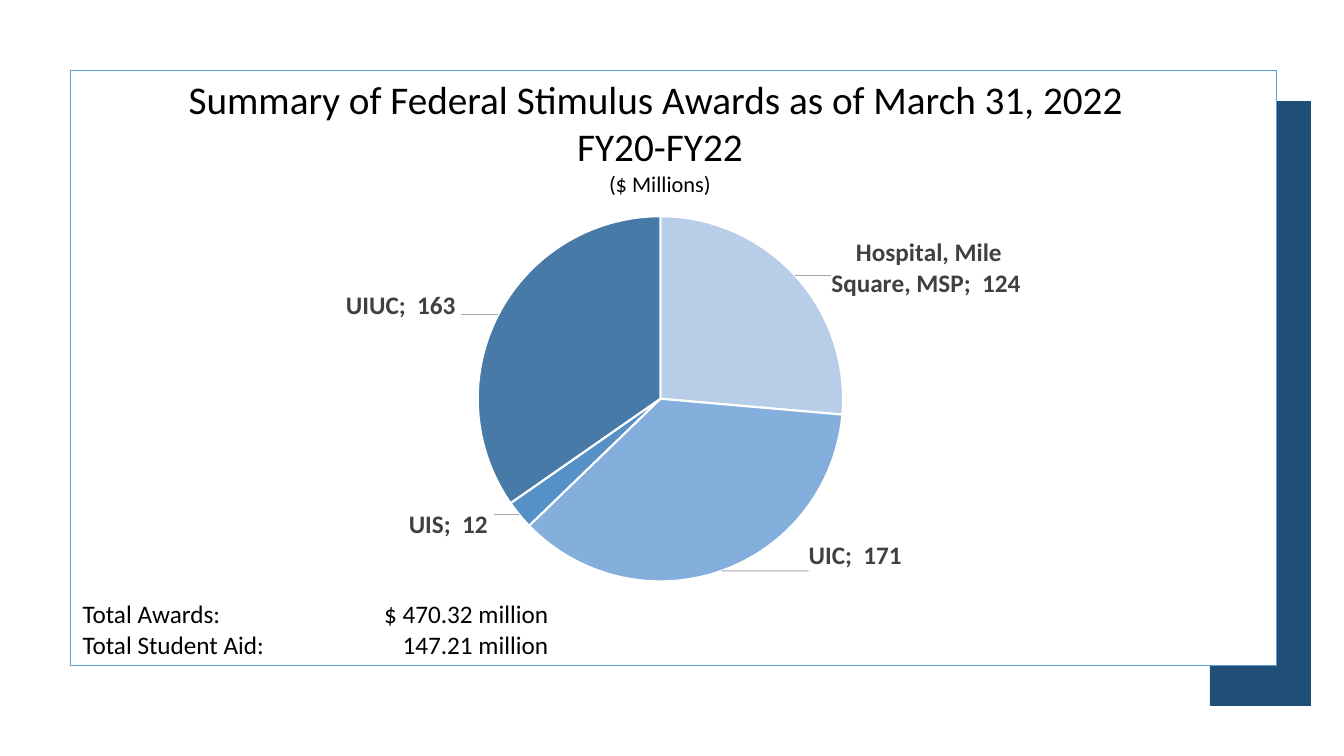
from dataclasses import dataclass

from pptx import Presentation
from pptx.chart.data import CategoryChartData
from pptx.dml.color import RGBColor
from pptx.enum.chart import XL_CHART_TYPE as ChartType, XL_LABEL_POSITION as LabelPosition
from pptx.enum.shapes import MSO_SHAPE as Preset
from pptx.enum.text import MSO_ANCHOR as Anchor, MSO_AUTO_SIZE as AutoSize, PP_ALIGN as Align
from pptx.oxml import parse_xml
from pptx.oxml.ns import nsdecls, qn
from pptx.util import Inches, Pt


@dataclass(frozen=True)
class Theme:
    font: str = "Calibri"
    title_size: int = 28
    unit_size: int = 16
    body_size: int = 18
    text: str = "000000"
    label: str = "404040"
    leader: str = "A6A6A6"
    paper: str = "FFFFFF"
    frame: str = "5B9BD5"
    ribbon: str = "2E75B6"
    fold: str = "1F4E79"


theme = Theme()

TITLE_LINES = [
    ("Summary of Federal Stimulus Awards as of March 31, 2022 ", theme.title_size),
    ("FY20-FY22", theme.title_size),
    ("($ Millions)", theme.unit_size),
]
AWARDS = [
    # name, value, fill, label shift
]
AWARDS = [
    ("Hospital, Mile Square, MSP", 124, "B8CDE8", (0.03, 0.06)),
    ("UIC", 171, "84AEDC", (0.08, -0.08)),
    ("UIS", 12, "5591C7", (-0.02, -0.02)),
    ("UIUC", 163, "487AA8", (-0.03, 0.02)),
]
TOTALS = [
    ("Total Awards:", "$ 470.32 million"),
    ("Total Student Aid:", "147.21 million"),
]
NUMBER_FORMAT = '_(* #,##0_);_(* \\(#,##0\\);_(* "-"??_);_('
RIBBON = [
    ([(12.93, 7.42), (12.16, 6.89), (12.16, 1), (12.93, 1.53)], theme.ribbon),
    ([(12.62, 6.61), (12.16, 6.9), (12.16, 1), (12.62, 0.7)], theme.fold),
]
FRAME_BOX = (0.7, 0.7, 11.96, 5.9)
CHART_BOX = (1.26, 1.71, 10.57, 4.49)
TITLE_BOX = (1.59, 0.7, 9.91, 1.31)
TOTALS_BOX = (0.72, 5.89, 6.52, 0.71)
PIE_AREA = {"x": 0.329, "y": 0.097, "w": 0.343, "h": 0.807}
AMOUNT_TAB = 4.62


def place(box):
    return [Inches(length) for length in box]


def paint(fill, color):
    fill.solid()
    fill.fore_color.rgb = RGBColor.from_string(color)


def style_font(font, size, color=theme.text, bold=False):
    font.name = theme.font
    font.size = Pt(size)
    font.bold = bold
    font.color.rgb = RGBColor.from_string(color)


def add_run(paragraph, text, size):
    run = paragraph.add_run()
    run.text = text
    style_font(run.font, size)


def manual_layout(values, modes=""):
    parts = "".join(f'<c:{key} val="{value}"/>' for key, value in values.items())
    return parse_xml(
        f'<c:layout {nsdecls("c")}><c:manualLayout>{modes}{parts}</c:manualLayout></c:layout>'
    )


def add_ribbon(slide):
    for points, color in RIBBON:
        builder = slide.shapes.build_freeform(*points[0], scale=Inches(1))
        builder.add_line_segments(points[1:], close=True)
        shape = builder.convert_to_shape()
        shape.shadow.inherit = False
        paint(shape.fill, color)
        shape.line.fill.background()


def add_frame(slide):
    frame = slide.shapes.add_shape(Preset.RECTANGLE, *place(FRAME_BOX))
    frame.shadow.inherit = False
    paint(frame.fill, theme.paper)
    paint(frame.line.fill, theme.frame)
    frame.line.width = Pt(1)


def add_pie(slide):
    data = CategoryChartData(number_format=NUMBER_FORMAT)
    data.categories = [award[0] for award in AWARDS]
    data.add_series("Series 1", [award[1] for award in AWARDS])
    chart = slide.shapes.add_chart(ChartType.PIE, *place(CHART_BOX), data).chart
    chart.has_title = False
    chart.has_legend = False
    style_font(chart.font, theme.body_size)
    plot = chart.plots[0]
    plot.vary_by_categories = True

    area = chart._chartSpace.chart.plotArea
    for layout in area.findall(qn("c:layout")):
        area.remove(layout)
    modes = '<c:layoutTarget val="inner"/><c:xMode val="edge"/><c:yMode val="edge"/>'
    area.insert(0, manual_layout(PIE_AREA, modes))

    series = plot.series[0]
    labels = series.data_labels
    labels.show_value = True
    labels.show_category_name = True
    labels.number_format = NUMBER_FORMAT
    labels.number_format_is_linked = False
    style_font(labels.font, theme.body_size, theme.label, True)
    labels._element.append(parse_xml(
        f'<c:leaderLines {nsdecls("c", "a")}><c:spPr><a:ln w="9525"><a:solidFill>'
        f'<a:srgbClr val="{theme.leader}"/></a:solidFill></a:ln></c:spPr></c:leaderLines>'
    ))
    for index, (name, value, color, shift) in enumerate(AWARDS):
        point = series.points[index]
        paint(point.format.fill, color)
        paint(point.format.line.fill, theme.paper)
        point.format.line.width = Pt(1.5)
        style_font(point.data_label.font, theme.body_size, theme.label, True)
        point.data_label.position = LabelPosition.OUTSIDE_END
    number_format = labels._element.find(qn("c:numFmt")).get("formatCode")
    for label, award in zip(labels._element.findall(qn("c:dLbl")), AWARDS):
        format_element = parse_xml(f'<c:numFmt {nsdecls("c")} formatCode="" sourceLinked="0"/>')
        format_element.set("formatCode", number_format)
        label.insert(1, manual_layout(dict(zip("xy", award[3]))))
        label.insert(2, format_element)
        label.find(qn("c:showCatName")).set("val", "1")
        label.append(parse_xml(f'<c:separator {nsdecls("c")}>; </c:separator>'))


def add_title(slide):
    title = slide.shapes.title
    slide.shapes._spTree.append(title._element)
    title.left, title.top, title.width, title.height = place(TITLE_BOX)
    frame = title.text_frame
    frame.word_wrap = True
    frame.auto_size = AutoSize.NONE
    frame.vertical_anchor = Anchor.TOP
    paragraph = frame.paragraphs[0]
    paragraph.alignment = Align.CENTER
    for index, (text, size) in enumerate(TITLE_LINES):
        if index:
            paragraph.add_line_break()
        add_run(paragraph, text, size)


def add_totals(slide):
    frame = slide.shapes.add_textbox(*place(TOTALS_BOX)).text_frame
    frame.word_wrap = True
    for index, (name, amount) in enumerate(TOTALS):
        paragraph = frame.add_paragraph() if index else frame.paragraphs[0]
        paragraph._p.get_or_add_pPr().append(parse_xml(
            f'<a:tabLst {nsdecls("a")}><a:tab pos="{Inches(AMOUNT_TAB)}" algn="r"/></a:tabLst>'
        ))
        add_run(paragraph, f"{name}\t{amount}", theme.body_size)


def main():
    presentation = Presentation()
    presentation.slide_width = Inches(13.33)
    presentation.slide_height = Inches(7.5)
    slide = presentation.slides.add_slide(presentation.slide_layouts[5])
    add_ribbon(slide)
    add_frame(slide)
    add_pie(slide)
    add_title(slide)
    add_totals(slide)
    presentation.save("out.pptx")


if __name__ == "__main__":
    main()
